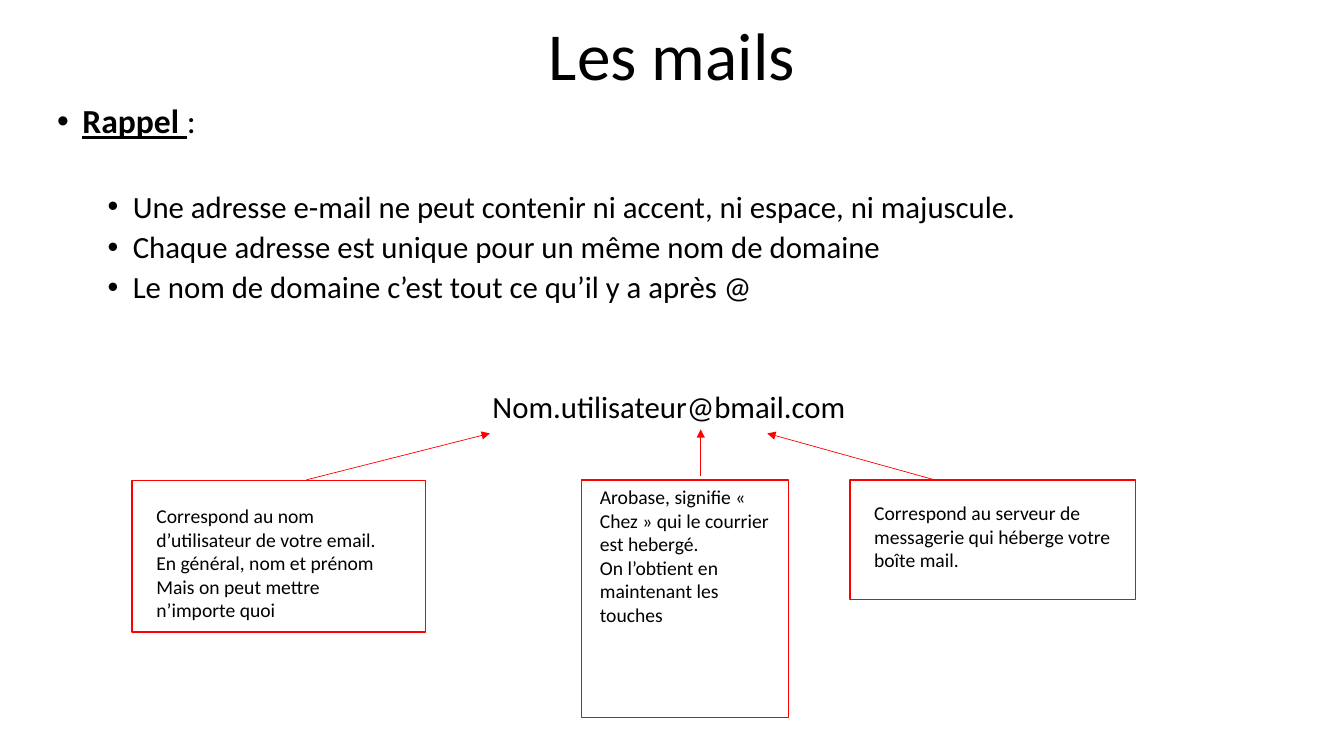
from lxml import etree
from pptx import Presentation, util as u
from pptx.dml.color import RGBColor
from pptx.enum import shapes, text
from pptx.oxml import ns

BLACK = RGBColor(0, 0, 0)
RED = RGBColor(255, 0, 0)
WIDE, HIGH = u.Inches(13.33), u.Inches(7.5)
FONT = "Calibri"
MID = text.PP_ALIGN.CENTER

NOTES = [
    ((9.83, 63.6, 21.83, 20), (1.8, 3.07, 2),
     ["Correspond au nom d’utilisateur de votre email.",
      "En général, nom et prénom",
      "Mais on peut mettre n’importe quoi"],
     (22.8, 63.47, 36.45, 57.33)),
    ((43.28, 63.47, 15.38, 31.47), (1.35, 0.67, 1.35),
     ["Arobase, signifie « Chez » qui le courrier est hebergé.",
      "On l’obtient en maintenant les touches"],
     (52.14, 62.93, 52.14, 56.8)),
    ((63.24, 63.47, 21.23, 15.87), (1.8, 2.8, 1.4),
     ["Correspond au serveur de messagerie qui héberge votre boîte mail."],
     (69.54, 63.47, 57.09, 57.33)),
]
RULES = [
    "Une adresse e-mail ne peut contenir ni accent, ni espace, ni majuscule.",
    "Chaque adresse est unique pour un même nom de domaine",
    "Le nom de domaine c’est tout ce qu’il y a après @",
]


def col(n):
    """Return the length of n columns out of 100."""
    return int(WIDE * n / 100)


def row(n):
    """Return the length of n rows out of 100."""
    return int(HIGH * n / 100)


def place(box):
    """Turn a box in columns and rows into lengths."""
    x, y, w, h = box
    return col(x), row(y), col(w), row(h)


def dot(para, left):
    """Give a paragraph a bullet with a hanging indent."""
    props = para._p.get_or_add_pPr()
    props.set("marL", str(u.Inches(left)))
    props.set("indent", str(u.Inches(-0.25)))
    face = etree.SubElement(props, ns.qn("a:buFont"))
    face.set("typeface", "Arial")
    mark = etree.SubElement(props, ns.qn("a:buChar"))
    mark.set("char", "•")


def write(frame, words, size, first=False, align=None, before=0,
          line=None, left=None, bold=False):
    """Add a paragraph of formatted text and return it."""
    para = frame.paragraphs[0] if first else frame.add_paragraph()
    para.alignment = align
    if line:
        para.line_spacing = line
    if before:
        para.space_before = u.Pt(before)
    if left:
        dot(para, left)
    run = para.add_run()
    run.text = words
    para.font.size = run.font.size = u.Pt(size)
    run.font.name = FONT
    run.font.color.rgb = BLACK
    run.font.bold = run.font.underline = bold
    return para


def title(slide, box):
    """Place the centred title in its box."""
    frame = slide.shapes.add_textbox(*place(box)).text_frame
    frame.word_wrap = True
    frame.vertical_anchor = text.MSO_ANCHOR.MIDDLE
    write(frame, "Les mails", 48, first=True, align=MID, line=0.9)


def body(slide, box):
    """Place the reminder, its rules and the sample address."""
    frame = slide.shapes.add_textbox(*place(box)).text_frame
    frame.word_wrap = True
    head = write(frame, "Rappel ", 24, first=True, line=0.9, left=0.75,
                 bold=True)
    colon = head.add_run()
    colon.text = ":"
    colon.font.size = u.Pt(24)
    colon.font.name = FONT
    colon.font.color.rgb = BLACK
    for i, rule in enumerate(RULES):
        write(frame, rule, 22, before=5 if i else 36, line=0.9, left=1.25)
    write(frame, "Nom.utilisateur@bmail.com", 22, align=MID, before=62,
          line=0.9)


def note(slide, box, pads, lines):
    """Place a red frame with its explanation."""
    shape = slide.shapes.add_shape(shapes.MSO_SHAPE.RECTANGLE, *place(box))
    shape.shadow.inherit = False
    shape.fill.background()
    shape.line.color.rgb = RED
    shape.line.width = u.Pt(1)
    frame = shape.text_frame
    frame.word_wrap = True
    frame.vertical_anchor = text.MSO_ANCHOR.TOP
    left, top, right = pads
    frame.margin_left, frame.margin_right = col(left), col(right)
    frame.margin_top, frame.margin_bottom = row(top), 0
    for i, words in enumerate(lines):
        write(frame, words, 14, first=i == 0, align=text.PP_ALIGN.LEFT)


def arrow(slide, ends):
    """Draw a thin red arrow toward the address."""
    x, y, to_x, to_y = ends
    link = slide.shapes.add_connector(shapes.MSO_CONNECTOR.STRAIGHT,
                                      col(x), row(y), col(to_x), row(to_y))
    link.line.color.rgb = RED
    link.line.width = u.Pt(0.5)
    tip = etree.SubElement(link.line._get_or_add_ln(), ns.qn("a:tailEnd"))
    tip.set("type", "triangle")
    etree.SubElement(link._element.spPr, ns.qn("a:effectLst"))


def main():
    """Build the slide and save it."""
    deck = Presentation()
    deck.slide_width, deck.slide_height = WIDE, HIGH
    slide = deck.slides.add_slide(deck.slide_layouts[6])
    title(slide, (0, 0.53, 100, 14.4))
    body(slide, (-0.23, 13.2, 100, 84.53))
    for box, pads, lines, ends in NOTES:
        note(slide, box, pads, lines)
        arrow(slide, ends)
    deck.save("out.pptx")


if __name__ == "__main__":
    main()
